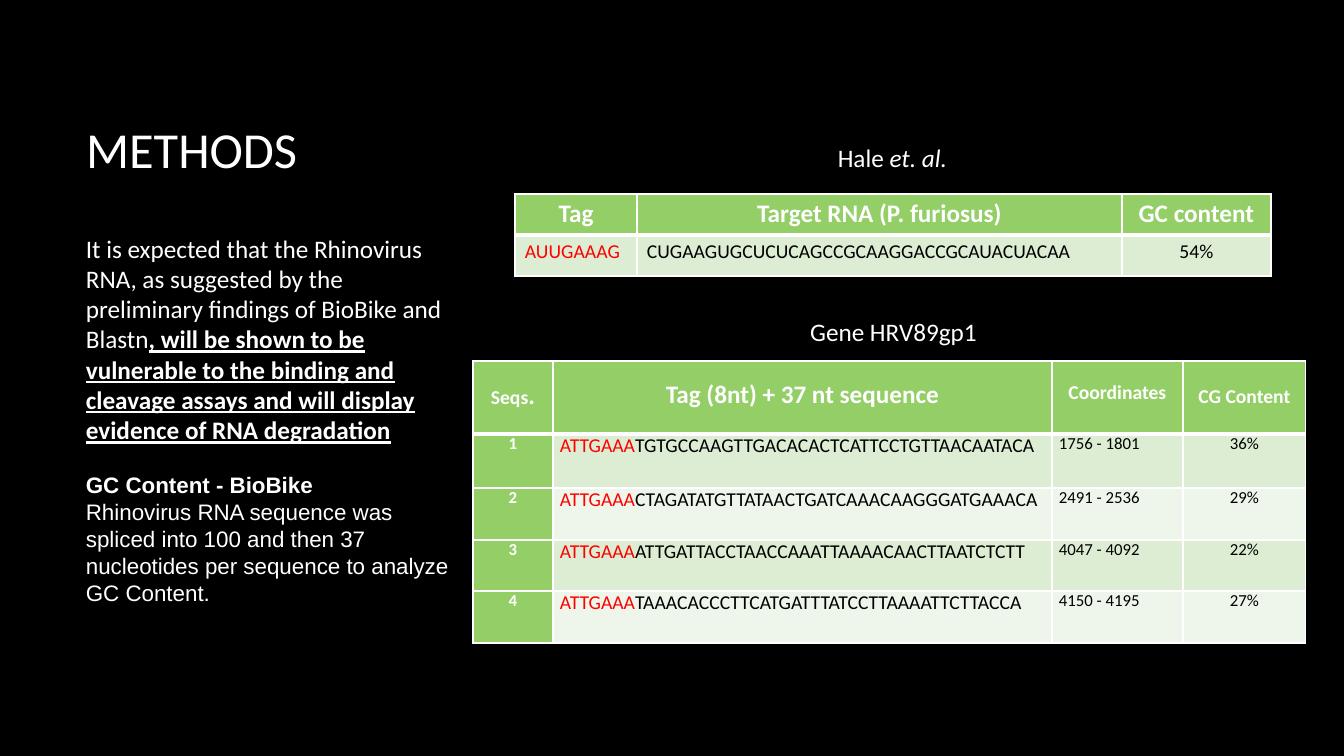
from lxml.etree import SubElement
from pptx import Presentation
from pptx.dml.color import RGBColor
from pptx.enum.text import MSO_ANCHOR as Anchor, PP_ALIGN as Align
from pptx.oxml.ns import qn
from pptx.util import Pt

EMU_PER_PX = 914400 / 100.8
WHITE = RGBColor(0xFF, 0xFF, 0xFF)
BLACK = RGBColor(0x00, 0x00, 0x00)
RED = RGBColor(0xFF, 0x00, 0x00)
GREEN = RGBColor(0x94, 0xCE, 0x67)
BAND = RGBColor(0xDC, 0xED, 0xD3)
PALE_BAND = RGBColor(0xEE, 0xF6, 0xEB)

TAG = "ATTGAAA"
GENE_ROWS = [
    ("1", "TGTGCCAAGTTGACACACTCATTCCTGTTAACAATACA", "1756 - 1801", "36%"),
    ("2", "CTAGATATGTTATAACTGATCAAACAAGGGATGAAACA", "2491 - 2536", "29%"),
    ("3", "ATTGATTACCTAACCAAATTAAAACAACTTAATCTCTT", "4047 - 4092", "22%"),
    ("4", "TAAACACCCTTCATGATTTATCCTTAAAATTCTTACCA", "4150 - 4195", "27%"),
]


def px(length):
    """Turn a length in px into EMU."""
    return round(length * EMU_PER_PX)


def add_run(paragraph, text, size=18, color=WHITE, bold=False, italic=False,
            underline=False, font="Calibri"):
    """Append one formatted run to a paragraph."""
    run = paragraph.add_run()
    run.text = text
    run.font.name = font
    run.font.size = Pt(size)
    run.font.color.rgb = color
    run.font.bold = bold
    run.font.italic = italic
    run.font.underline = underline


def set_borders(cell, top=1, bottom=1):
    """Draw white borders around a cell, widths in points."""
    properties = cell._tc.get_or_add_tcPr()
    for side, width in (("L", 1), ("R", 1), ("T", top), ("B", bottom)):
        line = SubElement(properties, qn(f"a:ln{side}"), w=str(Pt(width)))
        fill = SubElement(line, qn("a:solidFill"))
        SubElement(fill, qn("a:srgbClr"), val=str(WHITE))


def add_grid(slide, left, top, widths, heights):
    """Add a bordered table with a heavy rule below its header."""
    table = slide.shapes.add_table(
        len(heights), len(widths), px(left), px(top),
        px(sum(widths)), px(sum(heights))).table
    for column, width in zip(table.columns, widths):
        column.width = px(width)
    for index, height in enumerate(heights):
        table.rows[index].height = px(height)
        for cell in table.rows[index].cells:
            set_borders(cell, top=3 if index == 1 else 1,
                        bottom=3 if index == 0 else 1)
    return table


def write_cell(cell, fill, align, *runs, side=10, top=5, bottom=5):
    """Fill a cell and write its (text, format) runs inside px margins."""
    cell.fill.solid()
    cell.fill.fore_color.rgb = fill
    cell.margin_left = cell.margin_right = px(side)
    cell.margin_top, cell.margin_bottom = px(top), px(bottom)
    paragraph = cell.text_frame.paragraphs[0]
    paragraph.alignment = align
    for text, style in runs:
        add_run(paragraph, text, **style)


def add_title(slide, left, top, width, height):
    """Place the slide title."""
    title = slide.shapes.title
    title.left, title.top = px(left), px(top)
    title.width, title.height = px(width), px(height)
    title.text_frame.vertical_anchor = Anchor.MIDDLE
    paragraph = title.text_frame.paragraphs[0]
    paragraph.alignment = Align.LEFT
    add_run(paragraph, "METHODS", size=36)


def add_text_box(slide, left, top, width, height):
    """Add a wrapping text box and return its text frame."""
    box = slide.shapes.add_textbox(px(left), px(top), px(width), px(height))
    box.text_frame.word_wrap = True
    return box.text_frame


def add_explanation(slide, left, top, width, height):
    """Write the expectation and the GC content method."""
    frame = add_text_box(slide, left, top, width, height)
    frame.vertical_anchor = Anchor.TOP
    frame.margin_top = px(100)
    expectation = frame.paragraphs[0]
    add_run(expectation, "It is expected that the Rhinovirus RNA, as suggested by "
            "the preliminary findings of BioBike and Blastn")
    add_run(expectation, ", will be shown to be vulnerable to the binding and "
            "cleavage assays and will display evidence of RNA degradation",
            bold=True, underline=True)
    heading = frame.add_paragraph()
    heading.space_before = Pt(19)
    add_run(heading, "GC Content - BioBike", size=16, bold=True, font="Arial")
    add_run(frame.add_paragraph(), "Rhinovirus RNA sequence was spliced into 100 and "
            "then 37 nucleotides per sequence to analyze GC Content.",
            size=16, font="Arial")


def add_caption(slide, left, top, width, height, *runs):
    """Write a centred table caption from (text, italic) runs."""
    paragraph = add_text_box(slide, left, top, width, height).paragraphs[0]
    paragraph.alignment = Align.CENTER
    for text, italic in runs:
        add_run(paragraph, text, italic=italic)


def add_target_table(slide, left, top):
    """Add the published tag and target RNA table."""
    table = add_grid(slide, left, top, (122, 485, 149), (41, 41))
    headers = ("Tag", "Target RNA (P. furiosus)", "GC content")
    values = (
        ("AUUGAAAG", RED, Align.LEFT),
        ("CUGAAGUGCUCUCAGCCGCAAGGACCGCAUACUACAA", BLACK, Align.LEFT),
        ("54%", BLACK, Align.CENTER),
    )
    for column, (header, (text, color, align)) in enumerate(zip(headers, values)):
        write_cell(table.cell(0, column), GREEN, Align.CENTER,
                   (header, {"bold": True}))
        write_cell(table.cell(1, column), BAND, align,
                   (text, {"size": 14, "color": color}))


def add_gene_table(slide, left, top):
    """Add the table of gene sequences and their GC content."""
    table = add_grid(slide, left, top, (80, 499, 131, 123), (73, 54, 52, 51, 52))
    small = {"size": 14, "bold": True}
    headers = (
        (20, ("Seqs", small), (".", {"bold": True})),
        (18, ("Tag (8nt) + 37 nt sequence", {"bold": True})),
        (20, ("Coordinates", small)),
        (24, ("CG Content", small)),
    )
    for column, (offset, *runs) in enumerate(headers):
        write_cell(table.cell(0, column), GREEN, Align.CENTER, *runs,
                   side=7, top=offset, bottom=0)
    value = {"size": 12, "color": BLACK}
    for row, (number, sequence, coordinates, content) in enumerate(GENE_ROWS, 1):
        band = BAND if row % 2 else PALE_BAND
        cells = (
            (GREEN, Align.CENTER, (number, {"size": 12, "bold": True})),
            (band, Align.LEFT, (TAG, {"size": 14, "color": RED}),
             (sequence, {"size": 14, "color": BLACK})),
            (band, Align.LEFT, (coordinates, value)),
            (band, Align.CENTER, (content, value)),
        )
        for column, parts in enumerate(cells):
            write_cell(table.cell(row, column), *parts, side=7, top=0, bottom=0)


def main():
    """Build the methods slide and save it."""
    presentation = Presentation()
    presentation.slide_width, presentation.slide_height = px(1344), px(756)
    slide = presentation.slides.add_slide(presentation.slide_layouts[5])
    slide.background.fill.solid()
    slide.background.fill.fore_color.rgb = BLACK
    add_title(slide, 76, 68, 1117, 160)
    add_gene_table(slide, 473, 361)
    add_explanation(slide, 76, 133, 397, 509)
    add_caption(slide, 731, 311, 325, 40, ("Gene HRV89gp1", False))
    add_target_table(slide, 515, 194)
    add_caption(slide, 789, 137, 207, 40, ("Hale ", False), ("et. al.", True))
    presentation.save("out.pptx")


if __name__ == "__main__":
    main()
